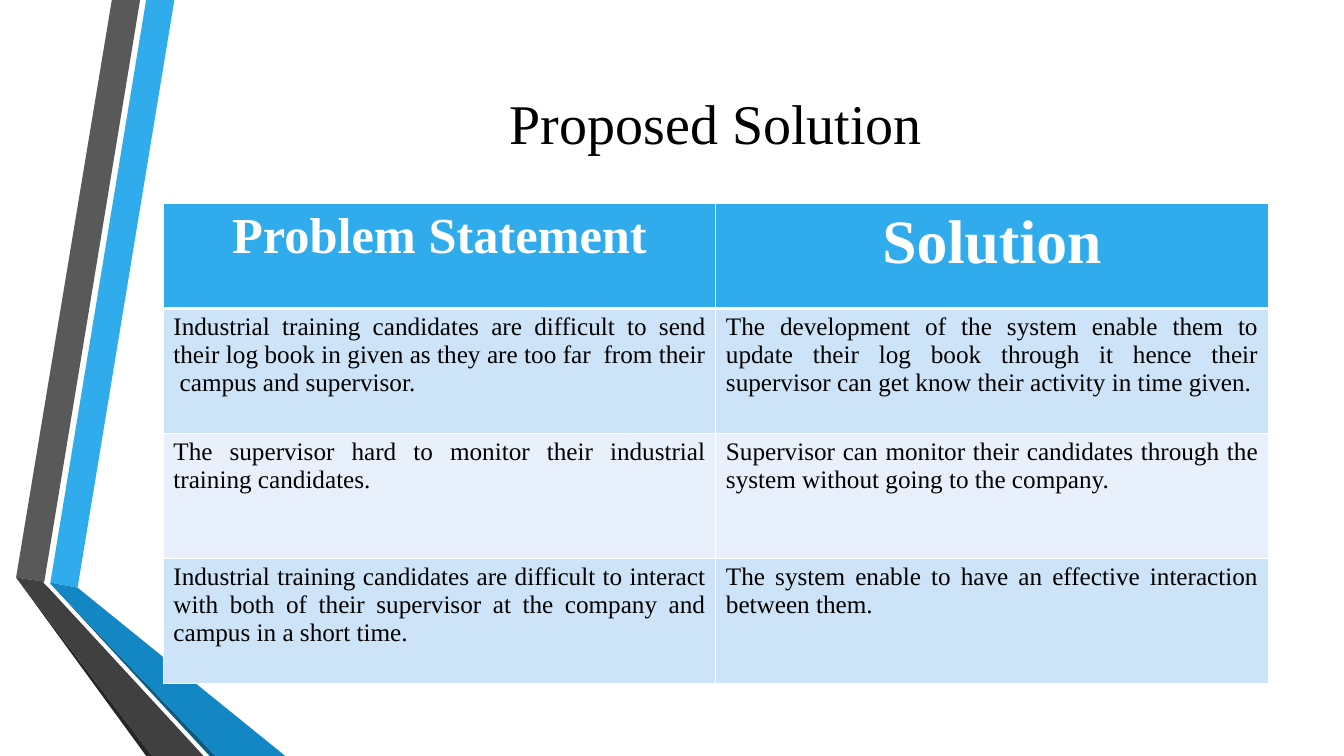
"""Build the Proposed Solution slide: ribbon artwork, title and a problem/solution table."""
from lxml import etree
from pptx import Presentation, util as u
from pptx.dml.color import RGBColor
from pptx.enum import text
from pptx.oxml import ns

FONT = "Times New Roman"
TITLE = "Proposed Solution"
HEADINGS = [("Problem Statement", 36), ("Solution", 44)]
SOLUTIONS = [
    ("Industrial training candidates are difficult to send their log book in given as they are too far  from their  campus and supervisor.",
     "The development of the system enable them to update their log book through it hence their supervisor can get know their activity in time given."),
    ("The supervisor hard to monitor their industrial training candidates.",
     "Supervisor can monitor their candidates through the system without going to the company. "),
    ("Industrial training candidates are difficult to interact with both of their supervisor at the company and campus in a short time.",
     "The system enable to have an effective interaction between them."),
]
RIBBONS = [
    ("30ACEC", [(0.5, 5.78), (0.77, 5.83), (1.73, 0), (1.45, 0)]),
    ("595959", [(1.39, 0), (1.11, 0), (0.16, 5.73), (0.44, 5.77)]),
    ("262626", [(0.16, 5.73), (1.45, 7.5), (1.51, 7.5)]),
    ("0C5A82", [(0.5, 5.79), (2.08, 7.5), (2.14, 7.5)]),
    ("1287C3", [(0.5, 5.79), (2.14, 7.5), (2.83, 7.5), (0.77, 5.83), (0.5, 5.78)]),
    ("404040", [(2.02, 7.5), (0.48, 5.83), (0.43, 5.78), (0.44, 5.77), (0.16, 5.73), (1.51, 7.5)]),
]
HEADING_FILL, BANDS = "30ACEC", ("CDE3F8", "E8F1FB")
LEFT, WIDTH = 1.62, 10.96
TITLE_TOP, TITLE_HEIGHT = 0.75, 0.93
TABLE_TOP, HEADING_HEIGHT, ROW_HEIGHT = 2.02, 1.04, 1.24


def paint(fill, color):
    fill.solid()
    fill.fore_color.rgb = RGBColor.from_string(color)


def write(frame, words, size, color, align, bold=False):
    paragraph = frame.paragraphs[0]
    paragraph.text = words
    paragraph.alignment = align
    font = paragraph.font
    font.name, font.size, font.bold = FONT, u.Pt(size), bold
    font.color.rgb = RGBColor.from_string(color)


def add_borders(cell, **widths):
    for side in "LRTB":
        line = etree.SubElement(cell._tc.get_or_add_tcPr(), ns.qn("a:ln" + side),
                                w=str(u.Pt(widths.get(side, 1))))
        solid = etree.SubElement(line, ns.qn("a:solidFill"))
        etree.SubElement(solid, ns.qn("a:srgbClr"), val="FFFFFF")


def add_ribbon(slide, color, points):
    corners = [(u.Inches(x), u.Inches(y)) for x, y in points]
    builder = slide.shapes.build_freeform(*corners[0])
    builder.add_line_segments(corners[1:], close=True)
    ribbon = builder.convert_to_shape()
    paint(ribbon.fill, color)
    ribbon.line.fill.background()
    ribbon.shadow.inherit = False


def add_title(slide):
    title = slide.shapes.add_textbox(u.Inches(LEFT), u.Inches(TITLE_TOP),
                                     u.Inches(WIDTH), u.Inches(TITLE_HEIGHT))
    title.text_frame.word_wrap = True
    title.text_frame.vertical_anchor = text.MSO_ANCHOR.MIDDLE
    write(title.text_frame, TITLE, 40, "000000", text.PP_ALIGN.CENTER)


def add_solutions(slide):
    height = HEADING_HEIGHT + ROW_HEIGHT * len(SOLUTIONS)
    table = slide.shapes.add_table(len(SOLUTIONS) + 1, len(HEADINGS), u.Inches(LEFT),
                                   u.Inches(TABLE_TOP), u.Inches(WIDTH), u.Inches(height)).table
    for row in table.rows:
        row.height = u.Inches(ROW_HEIGHT)
    table.rows[0].height = u.Inches(HEADING_HEIGHT)
    for column, (heading, size) in enumerate(HEADINGS):
        cell = table.cell(0, column)
        add_borders(cell, B=3)
        paint(cell.fill, HEADING_FILL)
        write(cell.text_frame, heading, size, "FFFFFF", text.PP_ALIGN.CENTER, True)
    for index, pair in enumerate(SOLUTIONS):
        for column, words in enumerate(pair):
            cell = table.cell(index + 1, column)
            add_borders(cell, T=1 if index else 3)
            paint(cell.fill, BANDS[index % 2])
            write(cell.text_frame, words, 18, "000000", text.PP_ALIGN.JUSTIFY)


def main():
    deck = Presentation()
    deck.slide_width, deck.slide_height = u.Inches(13.33), u.Inches(7.5)
    slide = deck.slides.add_slide(deck.slide_layouts[6])
    for color, points in RIBBONS:
        add_ribbon(slide, color, points)
    add_title(slide)
    add_solutions(slide)
    deck.save("out.pptx")


if __name__ == "__main__":
    main()
